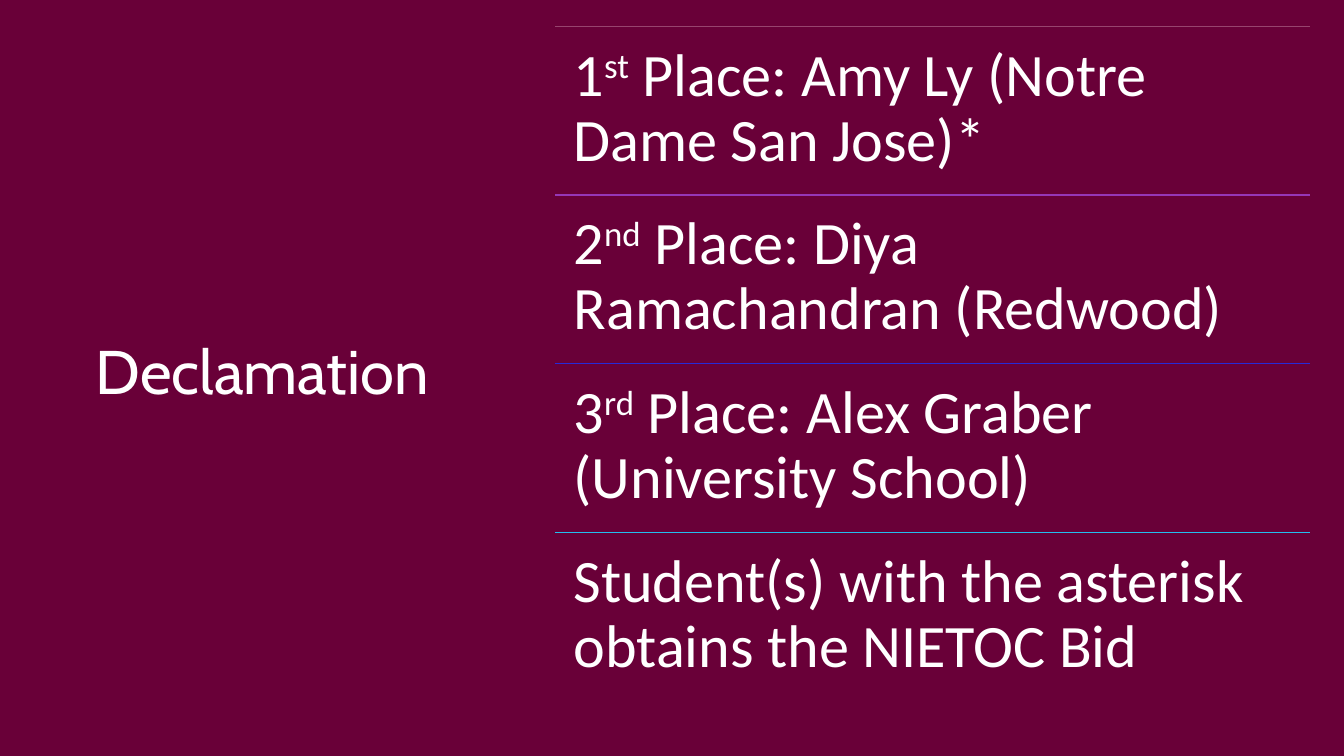
from lxml.etree import SubElement
from pptx import Presentation
from pptx.dml.color import RGBColor
from pptx.enum.shapes import MSO_CONNECTOR as Connector, MSO_SHAPE as Shape
from pptx.enum.text import MSO_ANCHOR as Anchor, MSO_AUTO_SIZE as AutoSize, PP_ALIGN as Align
from pptx.oxml.ns import qn
from pptx.util import Inches, Pt

WHITE = RGBColor(0xFF, 0xFF, 0xFF)
MAROON = RGBColor(0x42, 0x00, 0x23)
WINE = RGBColor(0x6E, 0x00, 0x3B)
MAUVE = RGBColor(0x97, 0x44, 0x6E)
PURPLE = RGBColor(0x96, 0x37, 0xB7)
BLUE = RGBColor(0x27, 0x29, 0xD8)
CYAN = RGBColor(0x24, 0xBE, 0xEE)

LIST_LEFT, LIST_TOP, LIST_WIDTH, ROW_HEIGHT = 41.33, 3.47, 56.11, 22.31
RESULTS = [
    (MAUVE, "1", "st", " Place: Amy Ly (Notre Dame San Jose)*"),
    (PURPLE, "2", "nd", " Place: Diya Ramachandran (Redwood)"),
    (BLUE, "3", "rd", " Place: Alex Graber (University School)"),
    (CYAN, "Student(s) with the asterisk obtains the NIETOC Bid", "", ""),
]


def add_span(para, text, *, font, size, color=WHITE, raised=0):
    """Add a formatted run, raised by a percentage of its size."""
    span = para.add_run()
    span.text = text
    span.font.name = font
    span.font.size = Pt(size)
    span.font.color.rgb = color
    if raised:
        span._r.get_or_add_rPr().set("baseline", str(raised * 1000))


class AwardPage:
    """Draw elements on one page, with lengths in percent of its size."""

    title_font, title_size = "Cabin", 44
    body_font, body_size = "Calibri", 43
    inset = Inches(0.18)

    def __init__(self, deck):
        """Add a title page to the deck."""
        self.width, self.height = deck.slide_width, deck.slide_height
        self.page = deck.slides.add_slide(deck.slide_layouts[5])

    def area(self, left, top, width, height):
        """Turn percentages into slide lengths."""
        return (int(self.width * left / 100), int(self.height * top / 100),
                int(self.width * width / 100), int(self.height * height / 100))

    def background(self, base, tint, opacity):
        """Fill the page and lay a translucent tint over it."""
        fill = self.page.background.fill
        fill.solid()
        fill.fore_color.rgb = base
        veil = self.page.shapes.add_shape(Shape.RECTANGLE, *self.area(0, 0, 100, 100))
        veil.shadow.inherit = False
        veil.line.fill.background()
        veil.fill.solid()
        veil.fill.fore_color.rgb = tint
        color = veil.element.spPr.find(f".//{qn('a:srgbClr')}")
        SubElement(color, qn("a:alpha"), val=str(opacity * 1000))

    def title(self, text, *area):
        """Place the title in front of the background."""
        box = self.page.shapes.title
        box.element.getparent().append(box.element)
        box.left, box.top, box.width, box.height = self.area(*area)
        frame = box.text_frame
        frame.word_wrap = True
        frame.auto_size = AutoSize.NONE
        frame.vertical_anchor = Anchor.MIDDLE
        para = frame.paragraphs[0]
        para.alignment = Align.LEFT
        para.line_spacing = 0.9
        add_span(para, text, font=self.title_font, size=self.title_size)

    def rule(self, left, top, width, color):
        """Draw a thin horizontal line."""
        x, y, length, _ = self.area(left, top, width, 0)
        line = self.page.shapes.add_connector(Connector.STRAIGHT, x, y, x + length, y)
        line.line.color.rgb = color
        line.line.width = Pt(1)
        SubElement(line.element.spPr, qn("a:effectLst"))

    def entry(self, area, lead, ordinal, rest):
        """Write a result with a raised ordinal suffix."""
        frame = self.page.shapes.add_textbox(*self.area(*area)).text_frame
        frame.word_wrap = True
        frame.margin_left = frame.margin_right = self.inset
        frame.margin_top = frame.margin_bottom = self.inset
        para = frame.paragraphs[0]
        para.line_spacing = 0.9
        for text, raised in ((lead, 0), (ordinal, 30), (rest, 0)):
            if text:
                add_span(para, text, font=self.body_font, size=self.body_size, raised=raised)


def main():
    """Build the declamation results."""
    deck = Presentation()
    deck.slide_width, deck.slide_height = Inches(13.33), Inches(7.5)
    page = AwardPage(deck)
    page.background(MAROON, WINE, 90)
    page.title("Declamation", 6.38, 7.2, 32.41, 84.8)
    for row, (color, *texts) in enumerate(RESULTS):
        top = LIST_TOP + row * ROW_HEIGHT
        page.rule(LIST_LEFT, top, LIST_WIDTH, color)
        page.entry((LIST_LEFT, top, LIST_WIDTH, ROW_HEIGHT), *texts)
    deck.save("out.pptx")


if __name__ == "__main__":
    main()
